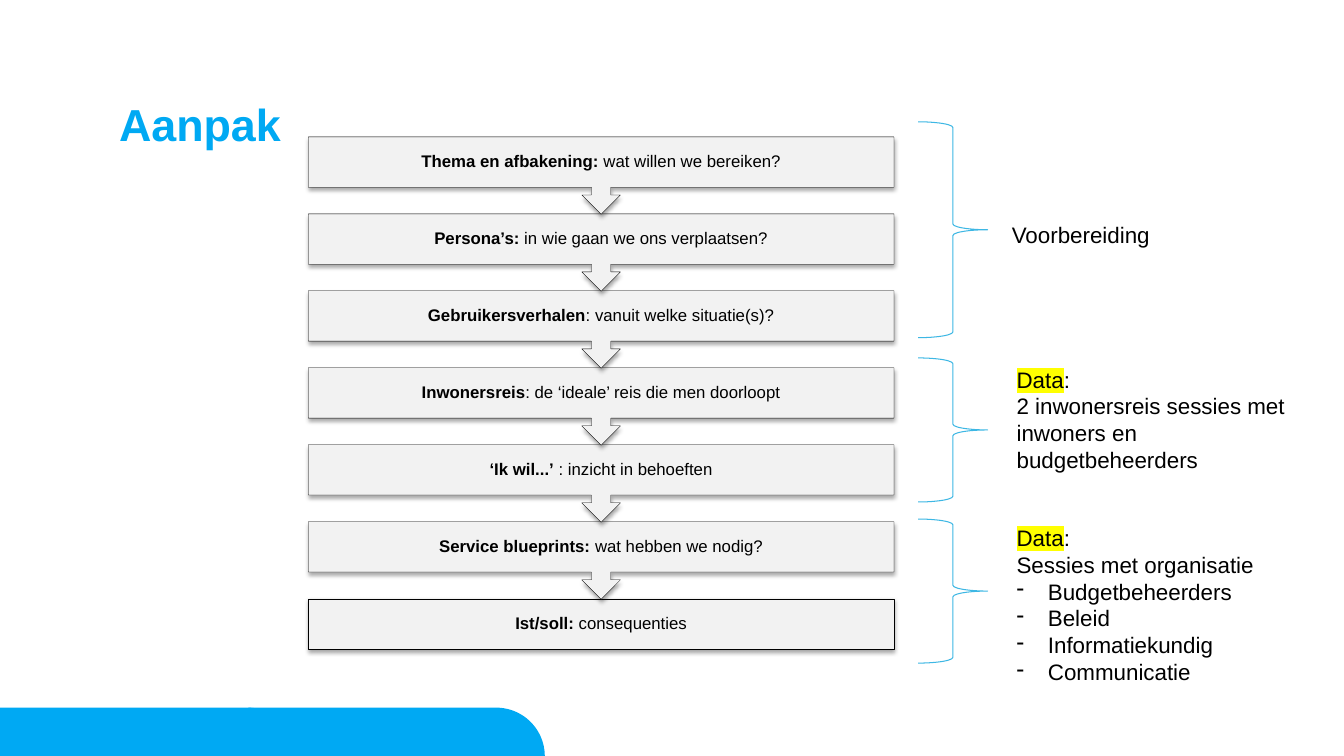
import math
from dataclasses import dataclass

from lxml import etree
from pptx import Presentation
from pptx.dml.color import RGBColor
from pptx.enum.shapes import MSO_SHAPE
from pptx.enum.text import MSO_ANCHOR, PP_ALIGN
from pptx.oxml.ns import qn
from pptx.util import Cm, Pt

RECTANGLE = MSO_SHAPE.RECTANGLE
CALLOUT = MSO_SHAPE.DOWN_ARROW_CALLOUT
BRACE = MSO_SHAPE.RIGHT_BRACE
TOP, MIDDLE = MSO_ANCHOR.TOP, MSO_ANCHOR.MIDDLE
LEFT, CENTER = PP_ALIGN.LEFT, PP_ALIGN.CENTER


@dataclass(frozen=True)
class Theme:
    """Colours, font and type sizes of the slide."""
    accent: RGBColor = RGBColor(0x00, 0xA9, 0xF3)
    brace: RGBColor = RGBColor(0x3D, 0xB7, 0xE4)
    step: RGBColor = RGBColor(0xF2, 0xF2, 0xF2)
    ink: RGBColor = RGBColor(0x00, 0x00, 0x00)
    highlight: str = "FFFF00"
    font: str = "Arial"
    title_size: Pt = Pt(32)
    step_size: Pt = Pt(12)
    note_size: Pt = Pt(16)


THEME = Theme()

STEPS = [
    ("Thema en afbakening: ", "wat willen we bereiken?"),
    ("Persona’s:", " in wie gaan we ons verplaatsen?"),
    ("Gebruikersverhalen", ": vanuit welke situatie(s)?"),
    ("Inwonersreis", ": de ‘ideale’ reis die men doorloopt"),
    ("‘Ik wil...’", " : inzicht in behoeften"),
    ("Service blueprints: ", "wat hebben we nodig?"),
    ("Ist/soll: ", "consequenties"),
]
BRACES = [(3.07, 5.44), (9.02, 3.63), (13.08, 3.63)]
SESSIONS = ["2 inwonersreis sessies met inwoners en budgetbeheerders"]
ORGANISATION = ["Sessies met organisatie"]
ROLES = ["Budgetbeheerders", "Beleid", "Informatiekundig", "Communicatie"]


def style_paragraph(paragraph, size, color=THEME.ink, bold=False):
    """Set the font shared by all runs of a paragraph."""
    font = paragraph.font
    font.name, font.size, font.bold = THEME.font, size, bold
    font.color.rgb = color


def add_shadow(shape):
    """Give a shape a soft shadow just below it."""
    shape.shadow.inherit = False
    effects = shape._element.spPr.find(qn("a:effectLst"))
    shadow = etree.SubElement(effects, qn("a:outerShdw"), blurRad="40000",
                              dist="23000", dir="5400000", rotWithShape="0")
    color = etree.SubElement(shadow, qn("a:srgbClr"), val="000000")
    etree.SubElement(color, qn("a:alpha"), val="35000")


def add_footer_tab(slide, left):
    """Draw a bar at the slide's foot with a rounded top right corner."""
    top, bottom, width, radius = 7.02 * 2.54, 19.05, 7.47, 1.23
    center = left + width - radius
    arc = [(Cm(center + radius * math.sin(math.radians(angle))),
            Cm(bottom - (bottom - top) * math.cos(math.radians(angle))))
           for angle in range(0, 91, 3)]
    builder = slide.shapes.build_freeform(Cm(left), Cm(bottom))
    builder.add_line_segments([(Cm(left), Cm(top)), *arc])
    tab = builder.convert_to_shape()
    tab.shadow.inherit = False
    tab.fill.solid()
    tab.fill.fore_color.rgb = THEME.accent
    tab.line.fill.background()


def add_step(slide, index, label, description):
    """Draw one step of the approach, with an arrow unless it is the last."""
    is_last = index == len(STEPS) - 1
    kind, height = (RECTANGLE, 1.27) if is_last else (CALLOUT, 1.95)
    shape = slide.shapes.add_shape(kind, Cm(7.77), Cm(3.45 + 1.94 * index),
                                   Cm(14.76), Cm(height))
    shape.fill.solid()
    shape.fill.fore_color.rgb = THEME.step
    shape.line.color.rgb = THEME.ink
    shape.line.width = Pt(0.2)
    add_shadow(shape)
    frame = shape.text_frame
    frame.vertical_anchor = MIDDLE
    frame.margin_left = frame.margin_right = Cm(0.23)
    frame.margin_top = frame.margin_bottom = Cm(0.23)
    paragraph = frame.paragraphs[0]
    paragraph.alignment = CENTER
    paragraph.line_spacing = 0.9
    style_paragraph(paragraph, THEME.step_size)
    label_run = paragraph.add_run()
    label_run.text = label
    label_run.font.bold = True
    paragraph.add_run().text = description


def add_brace(slide, top, height):
    """Draw a brace that groups steps."""
    brace = slide.shapes.add_shape(BRACE, Cm(23.14), Cm(top), Cm(1.75), Cm(height))
    brace.shadow.inherit = False
    brace.fill.background()
    brace.line.color.rgb = THEME.brace
    brace.line.width = Pt(0.75)


def add_text_box(slide, left, top, width, height, wrap=True):
    """Add an empty text box and return its text frame."""
    frame = slide.shapes.add_textbox(Cm(left), Cm(top), Cm(width), Cm(height)).text_frame
    frame.word_wrap = wrap
    frame.vertical_anchor = TOP
    return frame


def add_title(slide, text):
    """Add the slide title."""
    frame = add_text_box(slide, 3, 2.59, 27.86, 1.47)
    frame.margin_left = frame.margin_right = 0
    frame.margin_top = frame.margin_bottom = 0
    paragraph = frame.paragraphs[0]
    paragraph.text = text
    paragraph.line_spacing = 0.9
    style_paragraph(paragraph, THEME.title_size, THEME.accent, True)


def add_dash(paragraph):
    """Give a paragraph a hanging dash."""
    properties = paragraph._p.get_or_add_pPr()
    properties.set("marL", str(Cm(0.79)))
    properties.set("indent", str(-Cm(0.79)))
    etree.SubElement(properties, qn("a:buChar"), char="-")


def add_data_note(slide, top, height, lines, dashed=()):
    """Add a note headed by the highlighted word Data."""
    frame = add_text_box(slide, 25.37, top, 7.9, height)
    heading = frame.paragraphs[0]
    style_paragraph(heading, THEME.note_size)
    word = heading.add_run()
    word.text = "Data"
    highlight = etree.SubElement(word._r.get_or_add_rPr(), qn("a:highlight"))
    etree.SubElement(highlight, qn("a:srgbClr"), val=THEME.highlight)
    heading.add_run().text = ":"
    for text in [*lines, *dashed]:
        paragraph = frame.add_paragraph()
        paragraph.text = text
        paragraph.alignment = LEFT
        if text in dashed:
            add_dash(paragraph)
        style_paragraph(paragraph, THEME.note_size)


def add_phase_label(slide, text):
    """Name the first group of steps."""
    paragraph = add_text_box(slide, 25.25, 5.44, 4.01, 0.94, wrap=False).paragraphs[0]
    paragraph.text = text
    style_paragraph(paragraph, THEME.note_size)


def main():
    """Build the slide and save it."""
    presentation = Presentation()
    presentation.slide_width, presentation.slide_height = Cm(33.87), Cm(19.05)
    slide = presentation.slides.add_slide(presentation.slide_layouts[6])
    for left in (0, 6.26):
        add_footer_tab(slide, left)
    add_title(slide, "Aanpak")
    for index, (label, description) in reversed(list(enumerate(STEPS))):
        add_step(slide, index, label, description)
    for top, height in BRACES:
        add_brace(slide, top, height)
    add_phase_label(slide, "Voorbereiding")
    add_data_note(slide, 9.09, 3, SESSIONS)
    add_data_note(slide, 13.08, 4.37, ORGANISATION, ROLES)
    presentation.save("out.pptx")


if __name__ == "__main__":
    main()
